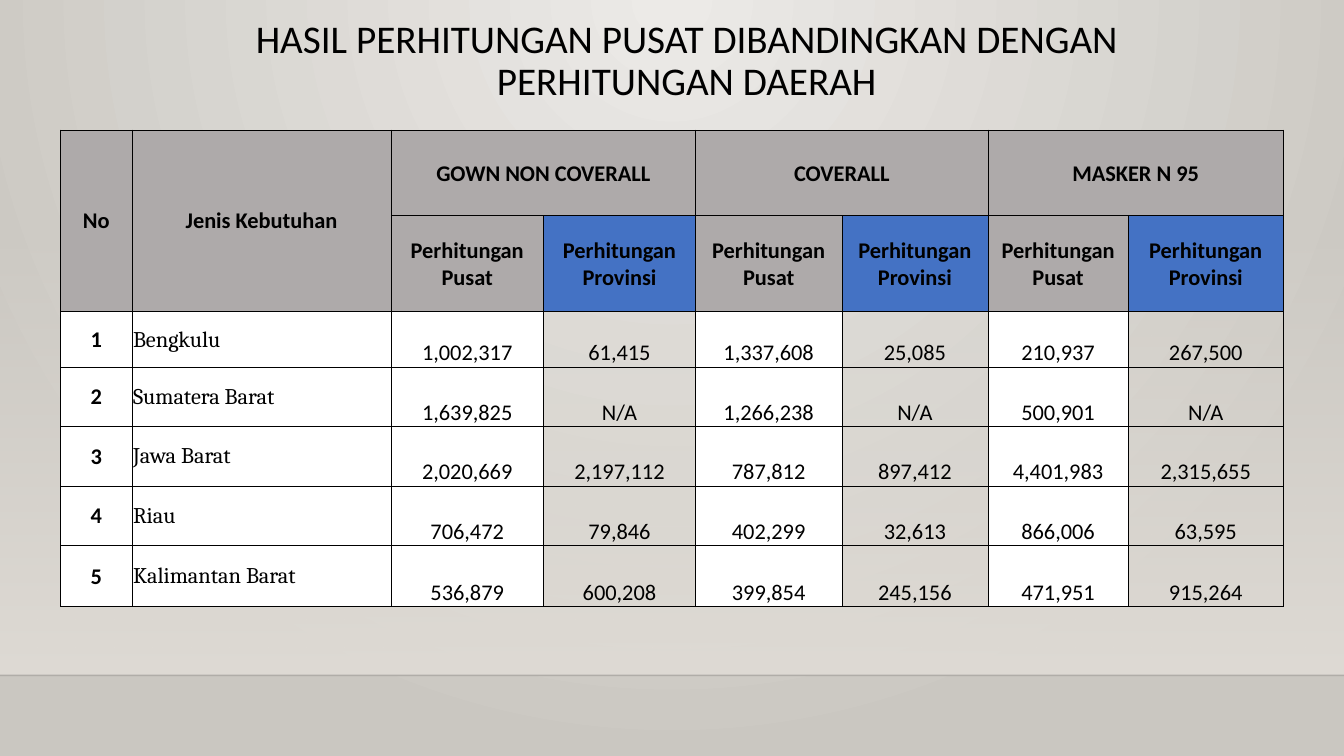
from lxml.etree import SubElement as add_child
from pptx import Presentation
from pptx.dml.color import RGBColor
from pptx.enum.shapes import MSO_CONNECTOR as Connector, MSO_SHAPE as Shape
from pptx.enum.text import MSO_ANCHOR as Anchor, MSO_AUTO_SIZE as AutoSize, PP_ALIGN as Align
from pptx.oxml import parse_xml
from pptx.oxml.ns import nsdecls, qn
from pptx.util import Inches, Pt

BLACK = RGBColor(0x00, 0x00, 0x00)
WHITE = RGBColor(0xFF, 0xFF, 0xFF)
GRAY = RGBColor(0xAE, 0xAA, 0xAA)
BLUE = RGBColor(0x44, 0x72, 0xC4)
GLOW = RGBColor(0xEC, 0xEA, 0xE7)
STONE = RGBColor(0xCA, 0xC7, 0xC1)
WALL = RGBColor(0xDF, 0xDB, 0xD5)

COLUMN_WIDTHS = [0.71, 2.57, 1.51, 1.51, 1.45, 1.45, 1.39, 1.54]
ROW_HEIGHTS = [0.85, 0.95, 0.55, 0.59, 0.59, 0.59, 0.61]
HEADER_ROWS = 2
NAME_COLUMN = 1
ITEMS = ["GOWN NON COVERALL", "COVERALL", "MASKER N 95"]
PROVINCES = [
    ("Bengkulu", "1,002,317", "61,415", "1,337,608", "25,085", "210,937", "267,500"),
    ("Sumatera Barat", "1,639,825", "N/A", "1,266,238", "N/A", "500,901", "N/A"),
    ("Jawa Barat", "2,020,669", "2,197,112", "787,812", "897,412", "4,401,983", "2,315,655"),
    ("Riau", "706,472", "79,846", "402,299", "32,613", "866,006", "63,595"),
    ("Kalimantan Barat", "536,879", "600,208", "399,854", "245,156", "471,951", "915,264"),
]


def write(paragraph, text, size, font="Calibri", bold=False, align=Align.CENTER):
    paragraph.alignment = align
    span = paragraph.add_run()
    span.text = text
    span.font.name, span.font.size, span.font.bold = font, Pt(size), bold
    span.font.color.rgb = BLACK


def set_gradient(fill, start, end):
    fill.gradient()
    for stop, color in zip(fill.gradient_stops, (start, end)):
        stop.color.rgb = color


deck = Presentation()
deck.slide_width, deck.slide_height = Inches(13.33), Inches(7.5)
page = deck.slides.add_slide(deck.slide_layouts[5])

# Background: a round glow from the top centre
set_gradient(page.background.fill, GLOW, STONE)
glow = page.element.find(".//" + qn("a:gradFill"))
glow.remove(glow.find(qn("a:lin")))
circle = add_child(glow, qn("a:path"), path="circle")
add_child(circle, qn("a:fillToRect"), l="43000", t="0", r="43000", b="100000")

# Wall fading in towards the floor line
floor = Inches(6.7)
wall_top = Inches(2.21)
wall = page.shapes.add_shape(Shape.RECTANGLE, 0, wall_top, deck.slide_width, floor - wall_top)
wall.shadow.inherit = False
wall.line.fill.background()
set_gradient(wall.fill, WALL, WALL)
wall.fill.gradient_angle = 270
add_child(wall.element.find(".//" + qn("a:srgbClr")), qn("a:alpha"), val="0")

edge = page.shapes.add_connector(Connector.STRAIGHT, 0, floor, deck.slide_width, floor)
edge.line.color.rgb = BLACK
edge.line.width = Pt(1)
add_child(edge.element.find(".//" + qn("a:srgbClr")), qn("a:alpha"), val="20000")
add_child(edge.element.spPr, qn("a:effectLst"))

# Title
title = page.shapes.title
title.left, title.top, title.width, title.height = map(Inches, (1.56, 0.14, 10.5, 1.15))
title.text_frame.auto_size = AutoSize.NONE
title.text_frame.vertical_anchor = Anchor.TOP
heading = title.text_frame.paragraphs[0]
heading.line_spacing = 0.9
write(heading, "HASIL PERHITUNGAN PUSAT DIBANDINGKAN DENGAN PERHITUNGAN DAERAH", 28)

# Table wording, row by row
top_header = ["No", "Jenis Kebutuhan"]
for item in ITEMS:
    top_header += [item, ""]
sub_header = ["", ""] + ["Perhitungan Pusat", "Perhitungan Provinsi"] * len(ITEMS)
body = [[str(number), *province] for number, province in enumerate(PROVINCES, 1)]
rows = [top_header, sub_header, *body]

frame = page.shapes.add_table(
    len(ROW_HEIGHTS), len(COLUMN_WIDTHS), Inches(0.6), Inches(1.29),
    Inches(sum(COLUMN_WIDTHS)), Inches(sum(ROW_HEIGHTS)))
table = frame.table
table.first_row = table.horz_banding = False
for column, width in zip(table.columns, COLUMN_WIDTHS):
    column.width = Inches(width)
for row, height in zip(table.rows, ROW_HEIGHTS):
    row.height = Inches(height)

for r, texts in enumerate(rows):
    for c, text in enumerate(texts):
        cell = table.cell(r, c)
        is_header = r < HEADER_ROWS
        is_figure = not is_header and c > NAME_COLUMN
        is_name = not is_header and c == NAME_COLUMN
        is_provincial = c > NAME_COLUMN and c % 2 == 1

        cell.margin_left = cell.margin_right = cell.margin_top = Inches(0.01)
        cell.margin_bottom = 0
        cell.vertical_anchor = Anchor.BOTTOM if is_figure else Anchor.MIDDLE
        if is_figure and is_provincial:
            cell.fill.background()
        else:
            cell.fill.solid()
            header_color = BLUE if r == 1 and is_provincial else GRAY
            cell.fill.fore_color.rgb = header_color if is_header else WHITE

        properties = cell._tc.get_or_add_tcPr()
        for position, side in enumerate(("lnL", "lnR", "lnT", "lnB")):
            properties.insert(position, parse_xml(
                f'<a:{side} {nsdecls("a")} w="{Pt(0.5)}"><a:solidFill>'
                f'<a:srgbClr val="{BLACK}"/></a:solidFill></a:{side}>'))

        if text:
            write(cell.text_frame.paragraphs[0], text, 16,
                  font="Cambria" if is_name else "Calibri",
                  bold=is_header or c == 0,
                  align=Align.LEFT if is_name else Align.CENTER)

for c in range(NAME_COLUMN + 1):
    table.cell(0, c).merge(table.cell(1, c))
for c in range(NAME_COLUMN + 1, len(COLUMN_WIDTHS), 2):
    table.cell(0, c).merge(table.cell(0, c + 1))

deck.save("out.pptx")
